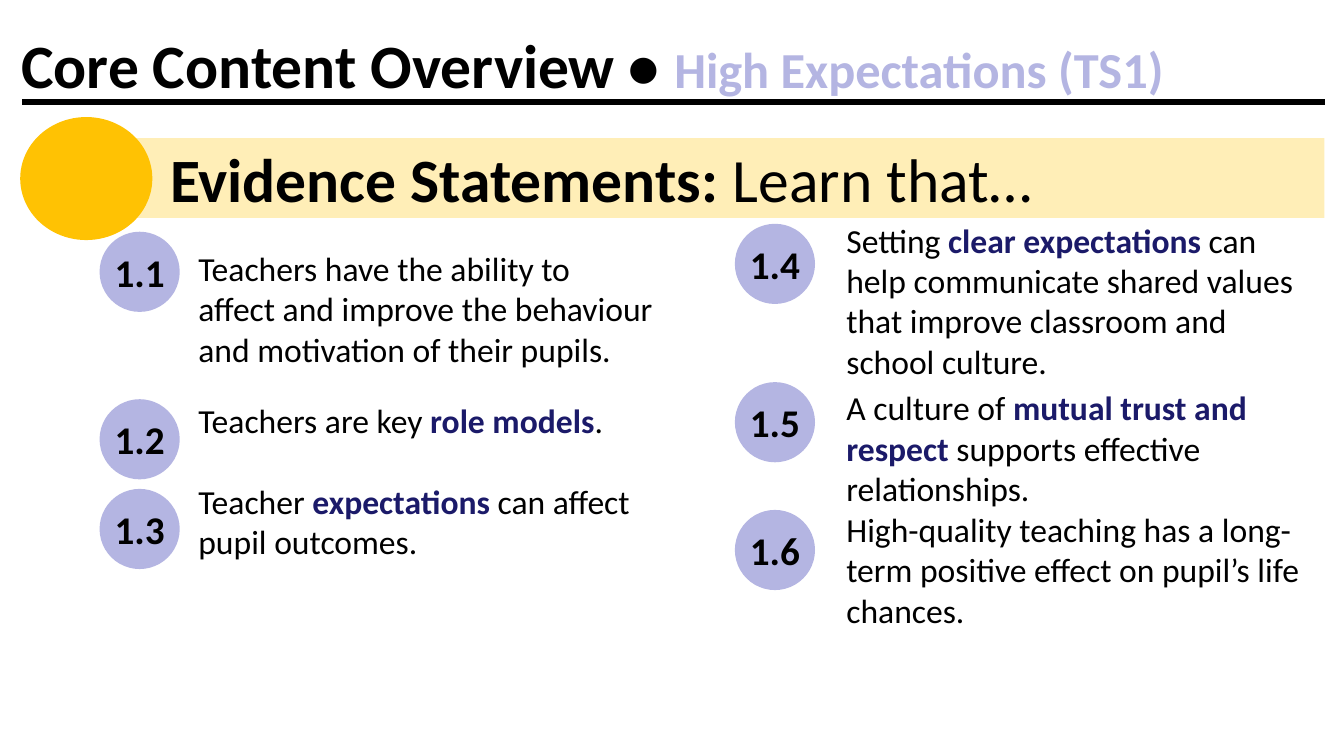
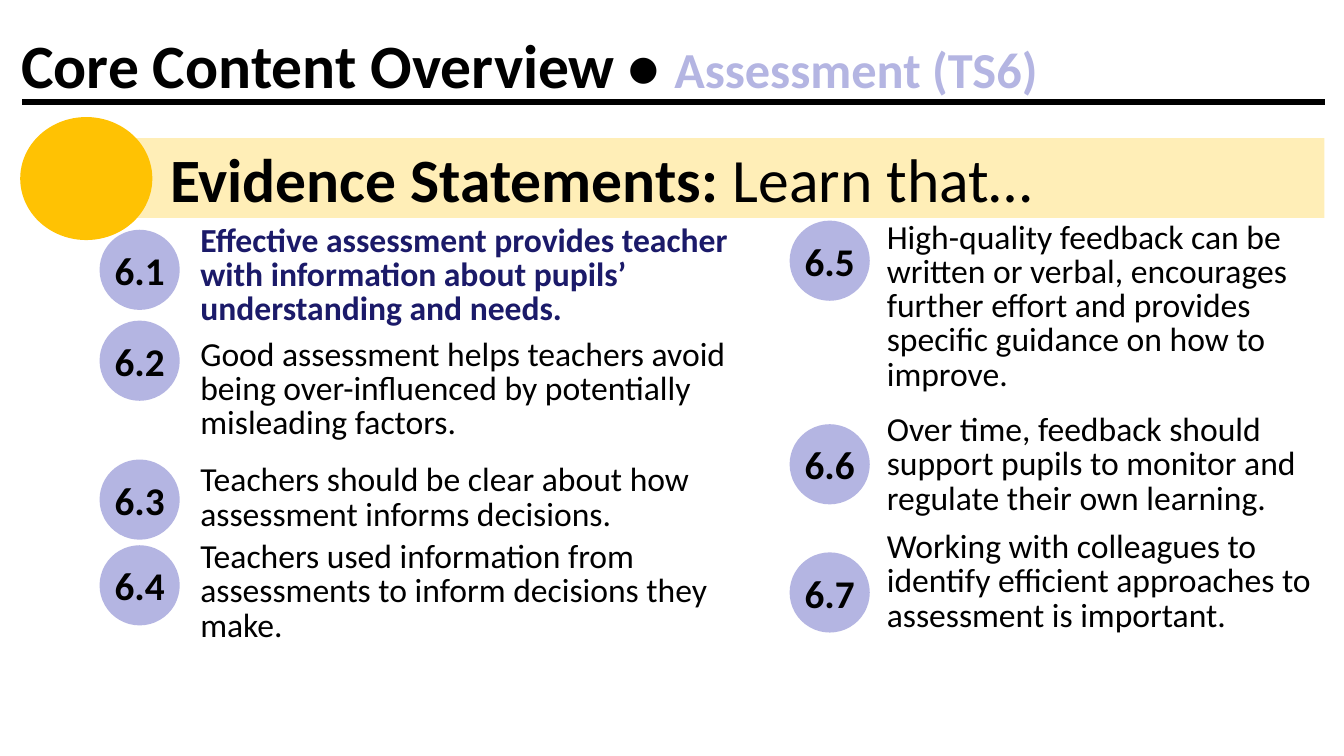
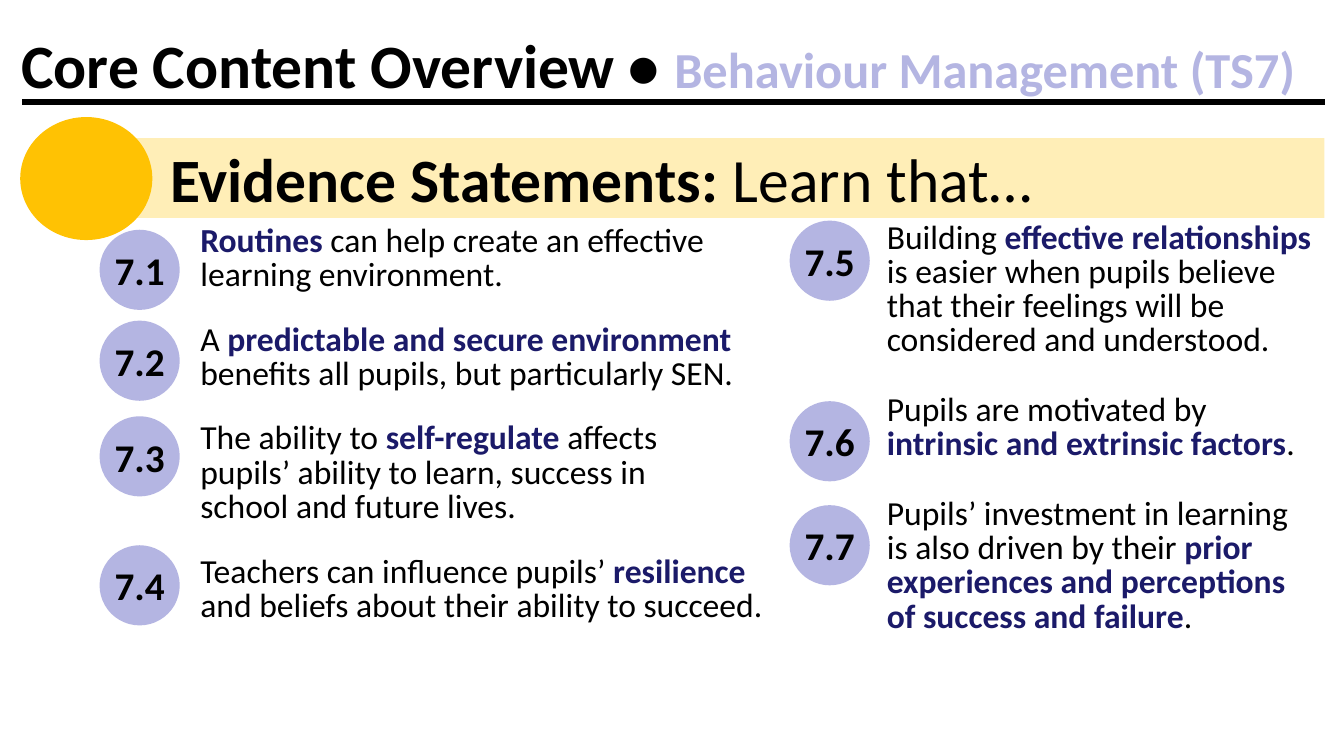
from dataclasses import dataclass

from lxml import etree
from pptx import Presentation
from pptx.dml.color import RGBColor
from pptx.enum.shapes import MSO_CONNECTOR, MSO_SHAPE
from pptx.enum.text import MSO_ANCHOR, MSO_AUTO_SIZE, PP_ALIGN
from pptx.oxml.ns import qn
from pptx.util import Cm, Pt

OVAL, RECT = MSO_SHAPE.OVAL, MSO_SHAPE.RECTANGLE
STRAIGHT = MSO_CONNECTOR.STRAIGHT
TOP, MIDDLE = MSO_ANCHOR.TOP, MSO_ANCHOR.MIDDLE
LEFT, CENTER = PP_ALIGN.LEFT, PP_ALIGN.CENTER
NO_FIT = MSO_AUTO_SIZE.NONE
TITLE_ONLY = 5


@dataclass(frozen=True)
class Theme:
    font: str = "Calibri"
    ink: str = "000000"
    key: str = "1B1A69"
    lilac: str = "B4B5E2"
    amber: str = "FFC203"
    cream: str = "FFEEB7"
    heading: int = 44
    topic: int = 36
    badge: int = 28
    body: int = 24


@dataclass(frozen=True)
class Statement:
    number: str
    badge_y: float
    text_y: float
    lines: int
    text: str  # key words stand between ** marks
    width: float = 0  # 0 takes the width of the column


@dataclass(frozen=True)
class Column:
    badge_x: float
    text_x: float
    width: float
    statements: tuple


T = Theme()
BADGE = 2.02
LINE_HEIGHT = 1.02
INSETS = 0.25


def write(tf, runs, size=T.body, align=LEFT, anchor=TOP, wrap=True,
          spacing=1.0, after=0):
    """Write one paragraph; each run is (text, bold, colour, size or None)."""
    tf.word_wrap = wrap
    tf.auto_size = NO_FIT
    tf.vertical_anchor = anchor
    p = tf.paragraphs[0]
    p.alignment = align
    p.line_spacing = spacing
    p.space_after = Pt(after)
    for text, bold, colour, run_size in runs:
        r = p.add_run()
        r.text = text
        r.font.name = T.font
        r.font.size = Pt(run_size or size)
        r.font.bold = bold
        r.font.color.rgb = RGBColor.from_string(colour)


def add_filled(s, kind, x, y, w, h, colour):
    sp = s.shapes.add_shape(kind, Cm(x), Cm(y), Cm(w), Cm(h))
    sp.shadow.inherit = False
    sp.fill.solid()
    sp.fill.fore_color.rgb = RGBColor.from_string(colour)
    sp.line.fill.background()
    return sp


def add_heading(s, topic, x, y, w, h):
    # Title with the topic in lilac
    title = s.shapes.title
    title.left, title.top, title.width, title.height = Cm(x), Cm(y), Cm(w), Cm(h)
    write(title.text_frame, [("Core Content Overview • ", True, T.ink, T.heading),
                             (topic, True, T.lilac, T.topic)])
    # Rule under the title
    rule_y = Cm(y + 2.01)
    rule = s.shapes.add_connector(STRAIGHT, Cm(x + 0.28), rule_y,
                                  Cm(x + w - 0.48), rule_y)
    rule.line.color.rgb = RGBColor.from_string(T.ink)
    rule.line.width = Pt(4.5)
    etree.SubElement(rule._element.spPr, qn("a:effectLst"))


def add_band(s, x, y, w, h):
    band = add_filled(s, RECT, x, y, w, h, T.cream)
    band.text_frame.margin_left = Cm(1.09)
    write(band.text_frame, [("Evidence Statements: ", True, T.ink, None),
                            ("Learn that…", False, T.ink, None)],
          size=T.heading, anchor=MIDDLE)
    add_filled(s, OVAL, x - 2.69, y - 0.53, 3.33, 3.1, T.amber)


def add_column(s, column, spacing):
    for st in column.statements:
        # Numbered badge
        badge = add_filled(s, OVAL, column.badge_x, st.badge_y, BADGE, BADGE, T.lilac)
        write(badge.text_frame, [(st.number, True, T.ink, None)], size=T.badge,
              align=CENTER, anchor=MIDDLE, wrap=False)
        # Statement
        height = INSETS + st.lines * LINE_HEIGHT * spacing
        box = s.shapes.add_textbox(Cm(column.text_x), Cm(st.text_y),
                                   Cm(st.width or column.width), Cm(height))
        runs = [(part, i % 2 == 1, T.key if i % 2 else T.ink, None)
                for i, part in enumerate(st.text.split("**")) if part]
        write(box.text_frame, runs, spacing=spacing, after=12)


def add_overview(prs, topic, spacing, columns):
    s = prs.slides.add_slide(prs.slide_layouts[TITLE_ONLY])
    add_heading(s, topic, 0.28, 0.56, 33.58, 2.13)
    add_band(s, 3.2, 3.48, 30.18, 2.01)
    for column in columns:
        add_column(s, column, spacing)


OVERVIEWS = [
    ("High Expectations (TS1)", 1.0, (
        Column(2.51, 4.75, 11.99, (
            Statement("1.1", 5.84, 6.12, 3, "Teachers have the ability to affect and "
                      "improve the behaviour and motivation of their pupils."),
            Statement("1.2", 10.06, 9.96, 1, "Teachers are key **role models**."),
            Statement("1.3", 12.32, 11.99, 2,
                      "Teacher **expectations** can affect pupil outcomes."),
        )),
        Column(18.52, 21.08, 11.99, (
            Statement("1.4", 5.64, 5.41, 4, "Setting **clear expectations** can help "
                      "communicate shared values that improve classroom and school "
                      "culture."),
            Statement("1.5", 9.63, 9.63, 3, "A culture of **mutual trust and respect "
                      "**supports effective relationships."),
            Statement("1.6", 12.85, 12.7, 3, "High-quality teaching has a long-term "
                      "positive effect on pupil’s life chances."),
        )),
    )),
    ("Assessment (TS6)", 0.85, (
        Column(2.51, 4.8, 15.04, (
            Statement("6.1", 5.79, 5.54, 3, "**Effective assessment provides teacher "
                      "with information about pupils’ understanding and needs.**"),
            Statement("6.2", 8.08, 8.41, 3, "Good assessment helps teachers avoid being "
                      "over-influenced by potentially misleading factors."),
            Statement("6.3", 11.58, 11.58, 2, "Teachers should be clear about how "
                      "assessment informs decisions."),
            Statement("6.4", 13.74, 13.51, 3, "Teachers used information from "
                      "assessments to inform decisions they make."),
        )),
        Column(19.9, 22.1, 11.3, (
            Statement("6.5", 5.56, 5.46, 5, "High-quality feedback can be written or "
                      "verbal, encourages further effort and provides specific "
                      "guidance on how to improve."),
            Statement("6.6", 10.69, 10.31, 3, "Over time, feedback should support "
                      "pupils to monitor and regulate their own learning."),
            Statement("6.7", 13.92, 13.26, 3, "Working with colleagues to identify "
                      "efficient approaches to assessment is important."),
        )),
    )),
    ("Behaviour Management (TS7)", 0.85, (
        Column(2.51, 4.8, 15.04, (
            Statement("7.1", 5.79, 5.54, 2, "**Routines** can help create an effective "
                      "learning environment."),
            Statement("7.2", 8.08, 8.03, 2, "A **predictable and secure environment** "
                      "benefits all pupils, but particularly SEN."),
            Statement("7.3", 10.49, 10.52, 3, "The ability to **self-regulate** affects "
                      "pupils’ ability to learn, success in school and future lives.",
                      width=13.89),
            Statement("7.4", 13.74, 13.89, 2, "Teachers can influence pupils’ "
                      "**resilience** and beliefs about their ability to succeed."),
        )),
        Column(19.9, 22.1, 11.3, (
            Statement("7.5", 5.56, 5.46, 4, "Building **effective relationships** is "
                      "easier when pupils believe that their feelings will be "
                      "considered and understood."),
            Statement("7.6", 10.11, 9.8, 2, "Pupils are motivated by **intrinsic and "
                      "extrinsic factors**."),
            Statement("7.7", 12.73, 12.42, 4, "Pupils’ investment in learning is also "
                      "driven by their **prior experiences and perceptions of success "
                      "and failure**."),
        )),
    )),
]


def main():
    prs = Presentation()
    prs.slide_width, prs.slide_height = Cm(33.87), Cm(19.05)
    for topic, spacing, columns in OVERVIEWS:
        add_overview(prs, topic, spacing, columns)
    prs.save("out.pptx")


if __name__ == "__main__":
    main()
